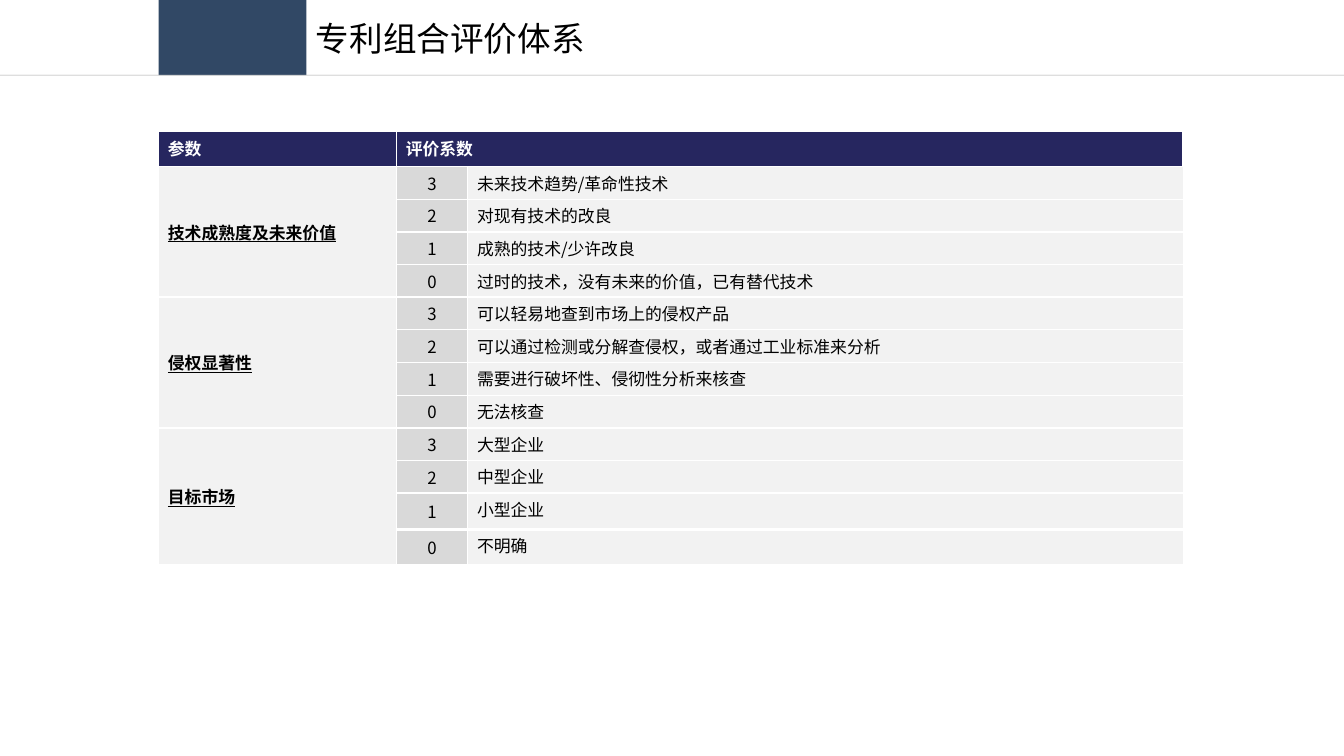
from pptx import Presentation
from pptx.util import Inches, Pt
from pptx.dml.color import RGBColor
from pptx.enum.shapes import MSO_SHAPE as Shape, MSO_CONNECTOR as Conn
from pptx.enum.text import PP_ALIGN as Align, MSO_ANCHOR as Anchor
from pptx.oxml.ns import qn
from lxml.etree import SubElement as Sub

# Content
TITLE = "专利组合评价体系"
HEADS = ["参数", "评价系数"]
GROUPS = [
    ("技术成熟度及未来价值", [
        "未来技术趋势/革命性技术",
        "对现有技术的改良",
        "成熟的技术/少许改良",
        "过时的技术，没有未来的价值，已有替代技术"]),
    ("侵权显著性", [
        "可以轻易地查到市场上的侵权产品",
        "可以通过检测或分解查侵权，或者通过工业标准来分析",
        "需要进行破坏性、侵彻性分析来核查",
        "无法核查"]),
    ("目标市场", ["大型企业", "中型企业", "小型企业", "不明确"]),
]
COLORS = {"block": "314865", "rule": "BFBFBF", "head": "26265F",
          "pale": "F2F2F2", "score": "D9D9D9", "white": "FFFFFF",
          "black": "000000"}
FONT = "Noto Sans CJK SC"
PLAIN = "{2D5ABB26-0587-4C30-8999-92F81FD0307C}"
LEFT, BAR, TALL = 1.18, 0.56, 3.23
COLS = [1.77, 0.53, 5.32]
TOP, END = 0.26, 0.27  # head row, last two rows
ROWS = [TOP] + [(TALL - TOP - 2 * END) / 10] * 10 + [END] * 2
THICK = {4, 8, 11, 12}  # rows with a heavy line below


def rgb(name):
    return RGBColor.from_string(COLORS[name])


def write(para, text, size, face, color, bold=False, under=False):
    run = para.add_run()
    run.text = text
    font = run.font
    font.size, font.name, font.bold = Pt(size), face, bold
    font.underline = under
    font.color.rgb = rgb(color)
    Sub(run._r.get_or_add_rPr(), qn("a:ea")).set("typeface", FONT)


def edge(cell, sides):
    props = cell._tc.get_or_add_tcPr()
    for side in "LRTB":
        if side in sides:
            line = Sub(props, qn("a:ln" + side), w=str(Pt(sides[side])))
            fill = Sub(line, qn("a:solidFill"))
            Sub(fill, qn("a:srgbClr"), val=COLORS["white"])


def below(row):
    return 1.5 if row in THICK else 0.75


def put(row, col, text, fill, color="black", bold=False, under=False,
        align=Align.LEFT, anchor=Anchor.TOP, last=None, sides="LR"):
    cell = table.cell(row, col)
    lines = {side: 0.75 for side in sides}
    lines["T"] = below(row - 1)
    lines["B"] = below(row if last is None else last)
    edge(cell, lines)
    cell.fill.solid()
    cell.fill.fore_color.rgb = rgb(fill)
    cell.margin_left = cell.margin_right = Inches(0.07)
    cell.margin_top = cell.margin_bottom = Inches(0.03)
    cell.vertical_anchor = anchor
    para = cell.text_frame.paragraphs[0]
    para.alignment = align
    write(para, text, 9, FONT, color, bold, under)


# Widescreen slide, 16 to 9
deck = Presentation()
deck.slide_width = Inches(10)
deck.slide_height = Inches(10 * 9 / 16)
slide = deck.slides.add_slide(deck.slide_layouts[5])
shapes = slide.shapes

# Header block and rule
block = shapes.add_shape(Shape.RECTANGLE, Inches(LEFT), 0, Inches(1.1), Inches(BAR))
block.shadow.inherit = False
block.fill.solid()
block.fill.fore_color.rgb = rgb("block")
block.line.fill.background()

rule = shapes.add_connector(Conn.STRAIGHT, 0, Inches(BAR), Inches(10), Inches(BAR))
rule.line.width = Pt(0.75)
rule.line.color.rgb = rgb("rule")
tint = rule._element.spPr.find(".//" + qn("a:srgbClr"))
Sub(tint, qn("a:alpha"), val="50000")
Sub(rule._element.spPr, qn("a:effectLst"))

# Title
title = shapes.title
title.left, title.top = Inches(2.28), Inches(0.04)
title.width, title.height = Inches(6.75), Inches(0.48)
frame = title.text_frame
frame.word_wrap = True
frame.vertical_anchor = Anchor.MIDDLE
frame.margin_left = frame.margin_right = Inches(0.07)
frame.margin_top = frame.margin_bottom = Inches(0.04)
frame.paragraphs[0].alignment = Align.LEFT
write(frame.paragraphs[0], TITLE, 18, "Calibri", "black")

# Table grid
table = shapes.add_table(len(ROWS), len(COLS), Inches(LEFT), Inches(0.98),
                         Inches(sum(COLS)), Inches(TALL)).table
table.horz_banding = table.first_row = False
table._tbl.tblPr.find(qn("a:tableStyleId")).text = PLAIN
for col, width in zip(table.columns, COLS):
    col.width = Inches(width)
for row, height in zip(table.rows, ROWS):
    row.height = Inches(height)

# Table head
table.cell(0, 1).merge(table.cell(0, 2))
for col, text in enumerate(HEADS):
    put(0, col, text, "head", "white", bold=True)

# One group of scores per parameter
row = 1
for name, notes in GROUPS:
    last = row + len(notes) - 1
    table.cell(row, 0).merge(table.cell(last, 0))
    put(row, 0, name, "pale", bold=True, under=True,
        anchor=Anchor.MIDDLE, last=last)
    for step, note in enumerate(notes):
        put(row, 1, str(len(notes) - 1 - step), "score",
            align=Align.CENTER, anchor=Anchor.MIDDLE, sides="L")
        put(row, 2, note, "pale", sides="")
        row += 1

deck.save("out.pptx")
